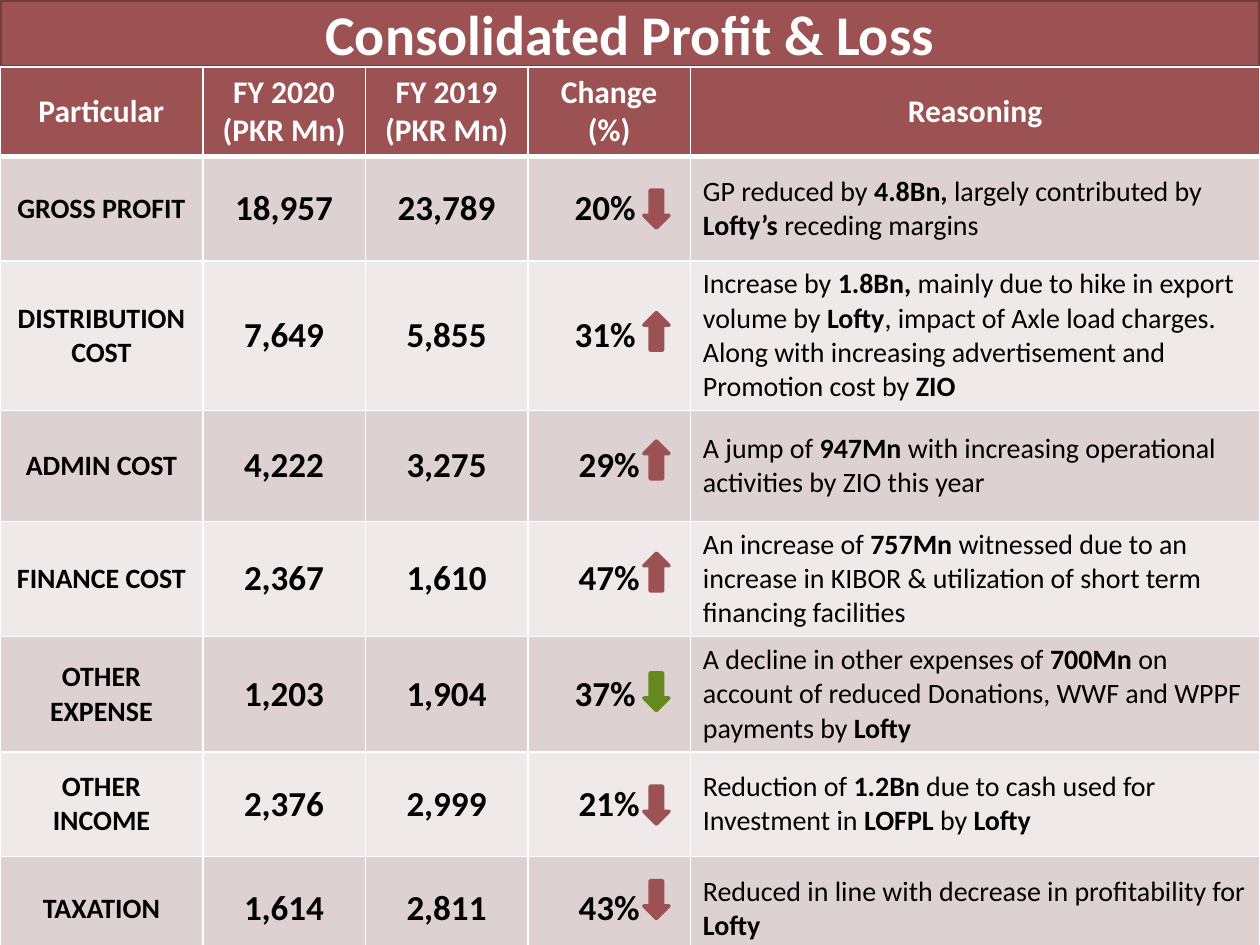
from lxml.etree import SubElement
from pptx import Presentation
from pptx.dml.color import RGBColor
from pptx.enum.shapes import MSO_SHAPE as SHAPE
from pptx.enum.text import MSO_ANCHOR as ANCHOR, MSO_AUTO_SIZE as AUTO_SIZE, PP_ALIGN as ALIGN
from pptx.oxml.ns import qn
from pptx.util import Inches, Pt

COLORS = {"red": "9C5252", "dark_red": "733D3D", "green": "63891F", "white": "FFFFFF",
          "black": "000000", "band_dark": "DED1D1", "band_light": "EFE9E9"}
COL_WIDTHS = [1.61, 1.29, 1.29, 1.29, 4.52]
ROW_HEIGHTS = [0.56, 0.83, 0.98, 0.88, 0.83, 0.83, 0.83, 0.83]
HEADERS = ["Particular", "FY 2020\n(PKR Mn)", "FY 2019\n(PKR Mn)", "Change (%)", "Reasoning"]
BODY_SIZES = [16, 20, 20, 20, 16]
ROWS = [
    ["GROSS PROFIT", "18,957", "23,789", "20% ",
     "GP reduced by *4.8Bn, *largely contributed by *Lofty’s* receding margins"],
    ["DISTRIBUTION COST", "7,649", "5,855", "31% ",
     "Increase by *1.8Bn, *mainly due to hike in export volume by *Lofty*, impact of Axle load "
     "charges. Along with increasing advertisement and Promotion cost by *ZIO*"],
    ["ADMIN COST", "4,222", "3,275", "29%",
     "A jump of *947Mn *with increasing operational activities by ZIO this year"],
    ["FINANCE COST", "2,367", "1,610", "47%",
     "An increase of *757Mn *witnessed due to an increase in KIBOR & utilization of "
     "short term financing facilities"],
    ["OTHER EXPENSE", "1,203", "1,904", "37% ",
     "A decline in other expenses of *700Mn *on account of reduced Donations, WWF and WPPF "
     "payments by *Lofty*"],
    ["OTHER INCOME", "2,376", "2,999", "21%",
     "Reduction of *1.2Bn *due to cash used for Investment in *LOFPL* by *Lofty*"],
    ["TAXATION", "1,614", "2,811", "43%",
     "Reduced in line with decrease in profitability for *Lofty*"],
]
ARROWS = [(1.51, "down", "red"), (2.48, "up", "red"), (3.5, "up", "red"), (4.39, "up", "red"),
          (5.34, "down", "green"), (6.24, "down", "red"), (6.99, "down", "red")]
ARROW_SHAPES = {"up": SHAPE.UP_ARROW, "down": SHAPE.DOWN_ARROW}


def rgb(name):
    """Return the named colour."""
    return RGBColor.from_string(COLORS[name])


def paint(shape, fill, line):
    """Give a shape a solid fill and a 2 pt outline."""
    shape.fill.solid()
    shape.fill.fore_color.rgb = rgb(fill)
    shape.line.color.rgb = rgb(line)
    shape.line.width = Pt(2)


def add_run(p, text, size, color, bold=True):
    """Add one formatted run to a paragraph."""
    r = p.add_run()
    r.text = text
    for key, value in {"name": "Calibri", "size": Pt(size), "bold": bold}.items():
        setattr(r.font, key, value)
    r.font.color.rgb = rgb(color)


def add_title(s, text):
    """Format the title placeholder as a full-width bar."""
    title = s.shapes.title
    box = {"left": 0, "top": 0, "width": 10, "height": 0.53}
    for key, value in box.items():
        setattr(title, key, Inches(value))
    paint(title, "red", "dark_red")
    tf = title.text_frame
    for key, value in {"auto_size": AUTO_SIZE.NONE, "word_wrap": True,
                       "vertical_anchor": ANCHOR.MIDDLE}.items():
        setattr(tf, key, value)
    p = tf.paragraphs[0]
    p.alignment = ALIGN.CENTER
    add_run(p, text, 32, "white")


def set_borders(cell, top, bottom):
    """Draw white borders around a cell with the given top and bottom points."""
    tc_pr = cell._tc.get_or_add_tcPr()
    for side, width in {"L": 1, "R": 1, "T": top, "B": bottom}.items():
        ln = SubElement(tc_pr, qn(f"a:ln{side}"), w=str(Pt(width)))
        SubElement(SubElement(ln, qn("a:solidFill")), qn("a:srgbClr"), val=COLORS["white"])


def fill_cell(cell, text, size, color, fill, rich=False):
    """Write a cell; in rich text, asterisks switch bold on and off."""
    cell.fill.solid()
    cell.fill.fore_color.rgb = rgb(fill)
    cell.vertical_anchor = ANCHOR.MIDDLE
    tf = cell.text_frame
    for i, line in enumerate(text.split("\n")):
        p = tf.add_paragraph() if i else tf.paragraphs[0]
        p.alignment = ALIGN.LEFT if rich else ALIGN.CENTER
        for j, part in enumerate(line.split("*")):
            if part:
                add_run(p, part, size, color, bold=not rich or j % 2 == 1)


def add_profit_table(s):
    """Add the profit and loss table with its header and banded rows."""
    frame = s.shapes.add_table(len(ROW_HEIGHTS), len(COL_WIDTHS), Inches(0), Inches(0.53),
                               Inches(10), Inches(sum(ROW_HEIGHTS)))
    table = frame.table
    for col, width in zip(table.columns, COL_WIDTHS):
        col.width = Inches(width)
    for row, height in zip(table.rows, ROW_HEIGHTS):
        row.height = Inches(height)
    for i, texts in enumerate([HEADERS] + ROWS):
        band = "band_dark" if i % 2 else "band_light"
        for j, text in enumerate(texts):
            cell = table.cell(i, j)
            set_borders(cell, 3 if i == 1 else 1, 3 if i == 0 else 1)
            if i == 0:
                fill_cell(cell, text, 18, "white", "red")
            else:
                fill_cell(cell, text, BODY_SIZES[j], "black", band, rich=j == 4)


def add_arrow(s, top, direction, color):
    """Add a block arrow in the change column."""
    sp = s.shapes.add_shape(ARROW_SHAPES[direction], Inches(5.11), Inches(top),
                            Inches(0.2), Inches(0.3))
    sp.shadow.inherit = False
    paint(sp, color, color)


def main():
    """Build and save the slide."""
    prs = Presentation()
    prs.slide_width, prs.slide_height = Inches(10), Inches(7.5)
    s = prs.slides.add_slide(prs.slide_layouts[5])
    add_title(s, "Consolidated Profit & Loss")
    add_profit_table(s)
    for arrow in ARROWS:
        add_arrow(s, *arrow)
    prs.save("out.pptx")


if __name__ == "__main__":
    main()
